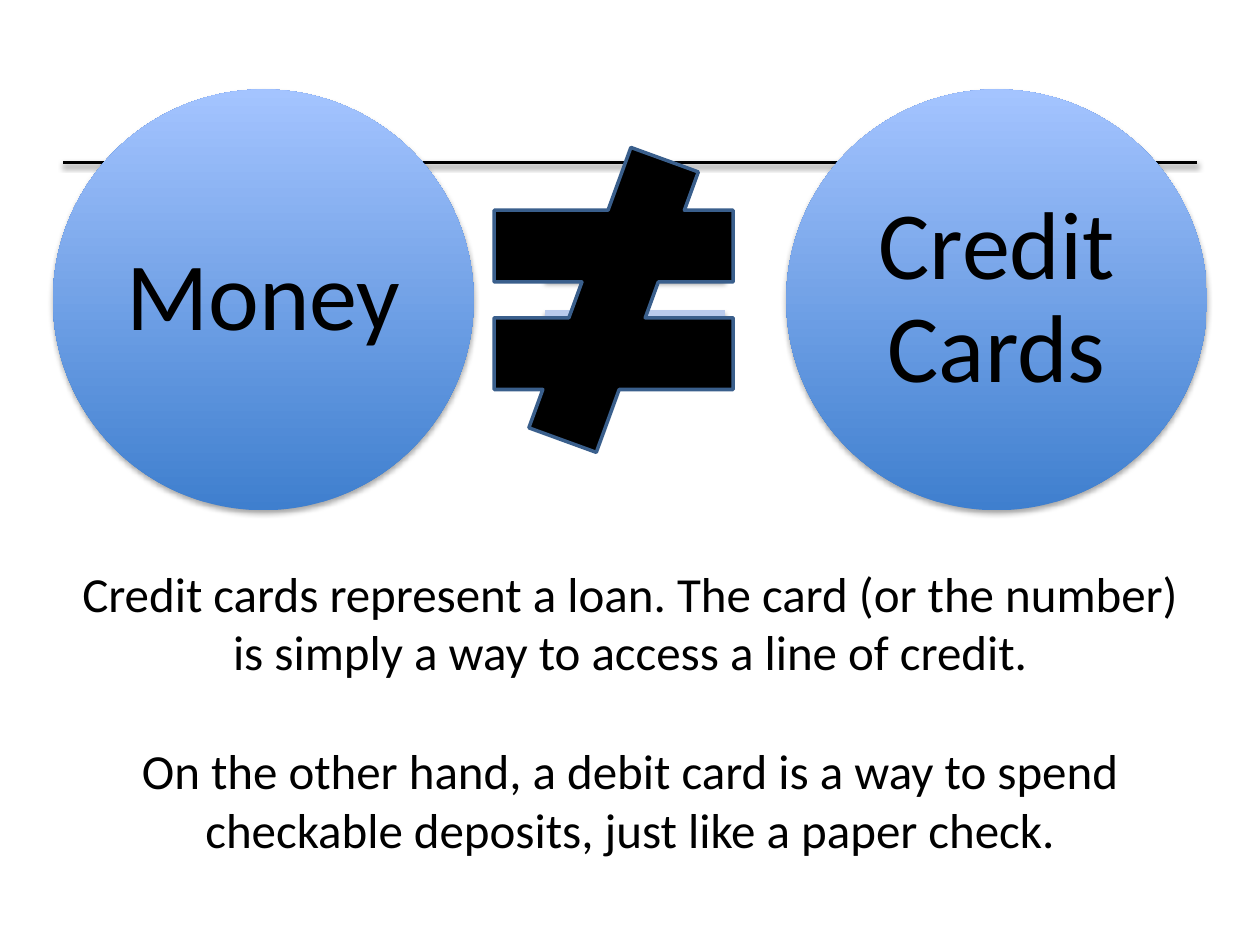
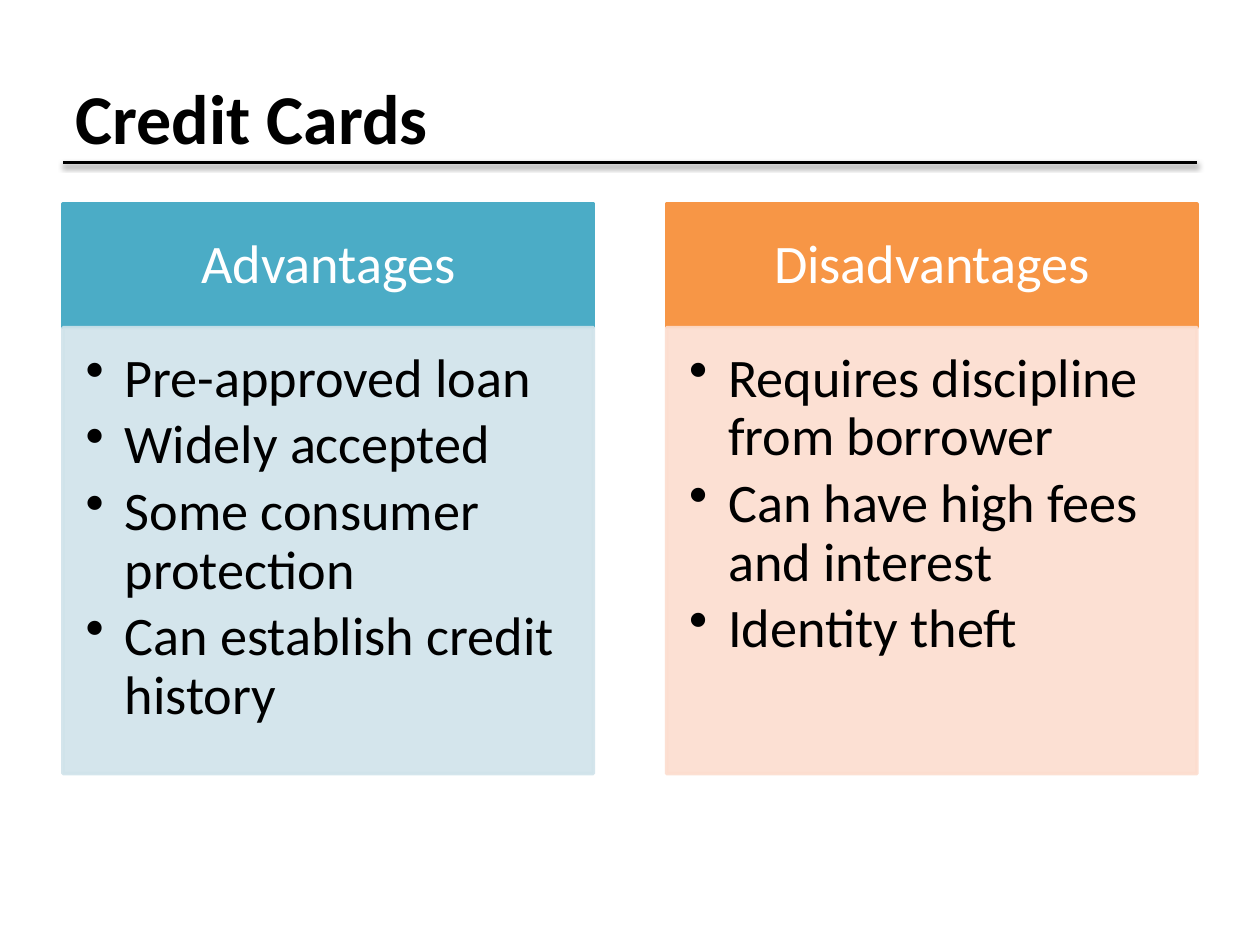
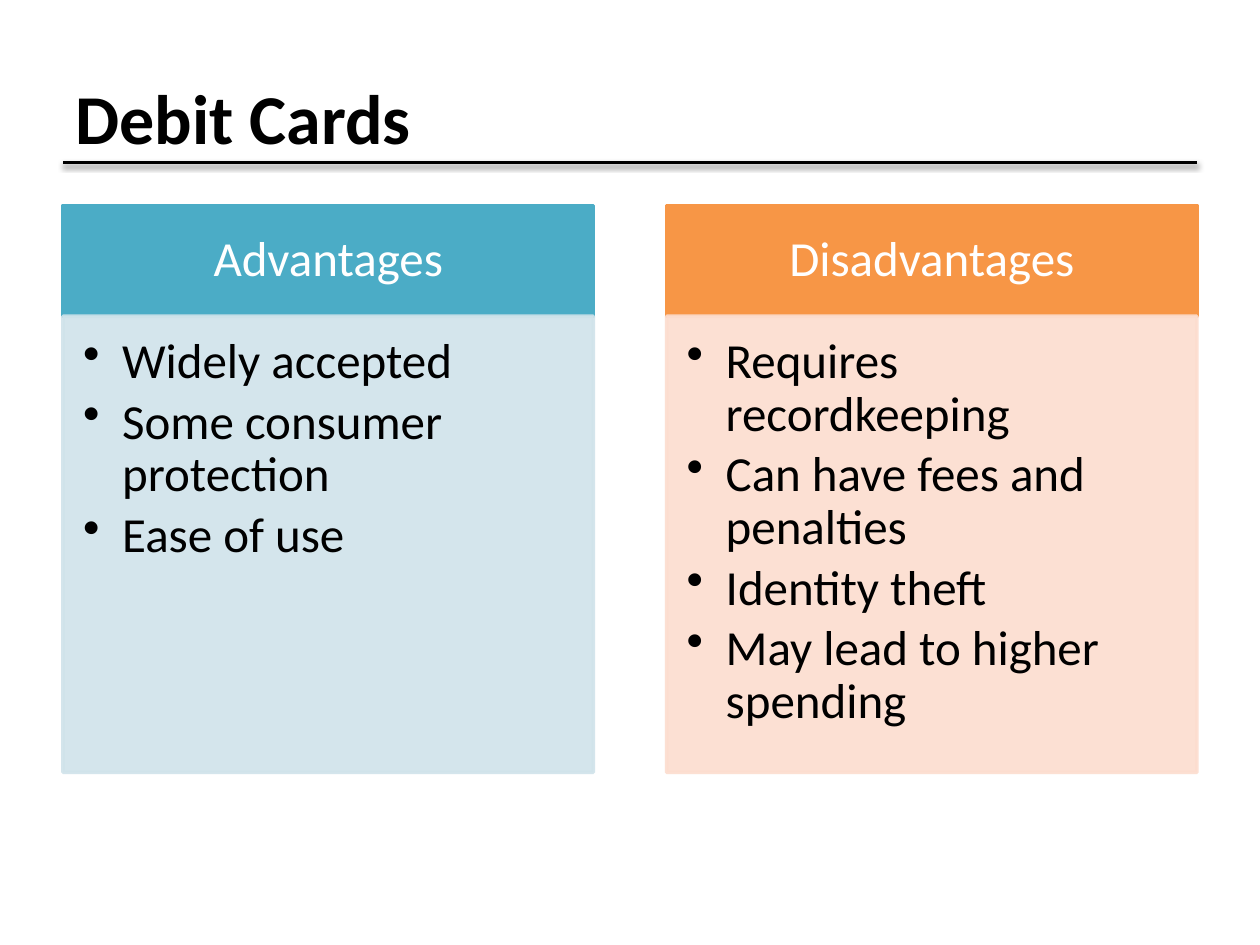
from lxml.etree import SubElement
from pptx import Presentation
from pptx.dml.color import RGBColor
from pptx.enum.shapes import MSO_CONNECTOR, MSO_SHAPE
from pptx.enum.text import MSO_ANCHOR, MSO_AUTO_SIZE, PP_ALIGN
from pptx.oxml.ns import qn
from pptx.util import Inches, Pt

# Shared style
FONT = "Calibri"
BLACK = RGBColor(0x00, 0x00, 0x00)
WHITE = RGBColor(0xFF, 0xFF, 0xFF)
TEAL = RGBColor(0x4B, 0xAC, 0xC6)
PALE_TEAL = RGBColor(0xD0, 0xE3, 0xEA)
ORANGE = RGBColor(0xF7, 0x96, 0x46)
PALE_ORANGE = RGBColor(0xFC, 0xDD, 0xCF)
OUTLINE_BLUE = RGBColor(0x3A, 0x5F, 0x8C)
CIRCLE_BLUES = RGBColor(0x3F, 0x7F, 0xCE), RGBColor(0xA4, 0xC4, 0xFF)
SIGN_BLUES = RGBColor(0xAD, 0xBF, 0xE1), RGBColor(0xCC, 0xDD, 0xFF)

TITLE_ONLY, BLANK = 5, 6
MARGIN, CONTENT_WIDTH, RULE_TOP = 0.5, 9, 1.29
COLUMN_WIDTH = 4.21
COLUMN_COLORS = [(TEAL, PALE_TEAL), (ORANGE, PALE_ORANGE)]


class Deck:
    def __init__(self):
        self.presentation = Presentation()
        self.presentation.slide_width = Inches(10)
        self.presentation.slide_height = Inches(7.5)
        self.slide = None

    def new_slide(self, title=None):
        layout = TITLE_ONLY if title else BLANK
        layouts = self.presentation.slide_layouts
        self.slide = self.presentation.slides.add_slide(layouts[layout])
        self.rule()
        if title:
            self.title(title)

    def rule(self):
        rule = self.slide.shapes.add_connector(
            MSO_CONNECTOR.STRAIGHT, Inches(MARGIN), Inches(RULE_TOP),
            Inches(MARGIN + CONTENT_WIDTH), Inches(RULE_TOP))
        rule.line.color.rgb = BLACK
        rule.line.width = Pt(2)
        self.cast_shadow(rule, distance=1.6, opacity=38)

    def title(self, text):
        title = self.slide.shapes.title
        title.left, title.top = Inches(MARGIN), Inches(0.3)
        title.width, title.height = Inches(CONTENT_WIDTH), Inches(1.25)
        title.text_frame.vertical_anchor = MSO_ANCHOR.MIDDLE
        self.set_lines(title.text_frame, [text], 40, BLACK, PP_ALIGN.LEFT, bold=True)

    def cast_shadow(self, shape, distance=1.8, opacity=35):
        effects = SubElement(shape._element.spPr, qn("a:effectLst"))
        shadow = SubElement(effects, qn("a:outerShdw"), blurRad=str(Pt(3.1)),
                            dist=str(Pt(distance)), dir="5400000", rotWithShape="0")
        color = SubElement(shadow, qn("a:srgbClr"), val=str(BLACK))
        SubElement(color, qn("a:alpha"), val=str(opacity * 1000))

    def set_lines(self, frame, lines, size, color, align, bold=False, spacing=None):
        frame.word_wrap = True
        frame.text = "\n".join(lines)
        for paragraph in frame.paragraphs:
            paragraph.alignment = align
            if spacing:
                paragraph.line_spacing = spacing
            for run in paragraph.runs:
                run.font.name = FONT
                run.font.size = Pt(size)
                run.font.bold = bold
                run.font.color.rgb = color

    def inset(self, frame, left, top, right, bottom):
        frame.margin_left, frame.margin_top = Inches(left), Inches(top)
        frame.margin_right, frame.margin_bottom = Inches(right), Inches(bottom)

    def shape(self, kind, left, top, width, height):
        return self.slide.shapes.add_shape(
            kind, Inches(left), Inches(top), Inches(width), Inches(height))

    def solid(self, kind, left, top, width, height, fill, line):
        solid = self.shape(kind, left, top, width, height)
        solid.shadow.inherit = False
        solid.fill.solid()
        solid.fill.fore_color.rgb = fill
        solid.line.color.rgb = line
        solid.line.width = Pt(2)
        return solid

    def glossy(self, kind, left, top, size, blues):
        glossy = self.shape(kind, left, top, size, size)
        glossy.fill.gradient()
        glossy.fill.gradient_angle = 90
        for stop, blue in zip(glossy.fill.gradient_stops, blues):
            stop.color.rgb = blue
        glossy.line.fill.background()
        self.cast_shadow(glossy)
        return glossy

    def circle(self, left, label):
        frame = self.glossy(MSO_SHAPE.OVAL, left, 0.71, 3.34, CIRCLE_BLUES).text_frame
        self.inset(frame, 0.08, 0.08, 0.08, 0.08)
        frame.vertical_anchor = MSO_ANCHOR.MIDDLE
        self.set_lines(frame, [label], 55, BLACK, PP_ALIGN.CENTER, spacing=0.9)

    def explanation(self, lines, top, height):
        box = self.slide.shapes.add_textbox(
            Inches(MARGIN), Inches(top), Inches(CONTENT_WIDTH), Inches(height))
        frame = box.text_frame
        self.set_lines(frame, lines, 28, BLACK, PP_ALIGN.CENTER)
        frame.auto_size = MSO_AUTO_SIZE.SHAPE_TO_FIT_TEXT
        for paragraph in frame.paragraphs[1:]:
            paragraph.space_before = Pt(34)

    def heading(self, text, left, top, height, size, color, insets):
        heading = self.solid(MSO_SHAPE.RECTANGLE, left, top, COLUMN_WIDTH, height,
                             color, color)
        frame = heading.text_frame
        self.inset(frame, *insets)
        frame.vertical_anchor = MSO_ANCHOR.MIDDLE
        self.set_lines(frame, [text], size, WHITE, PP_ALIGN.CENTER, spacing=0.9)

    def bullets(self, points, left, top, height, size, color, insets):
        panel = self.solid(MSO_SHAPE.RECTANGLE, left, top, COLUMN_WIDTH, height,
                           color, color)
        for tint in panel._element.spPr.iter(qn("a:srgbClr")):
            SubElement(tint, qn("a:alpha"), val="90000")
        frame = panel.text_frame
        self.inset(frame, *insets)
        frame.vertical_anchor = MSO_ANCHOR.TOP
        self.set_lines(frame, points, size, BLACK, PP_ALIGN.LEFT, spacing=0.9)
        for paragraph in frame.paragraphs:
            paragraph.level = 1
            paragraph.space_after = Pt(round(size * 0.15, 1))
            properties = paragraph._p.get_or_add_pPr()
            properties.set("marL", str(Inches(0.31)))
            properties.set("indent", str(-Inches(0.31)))
            SubElement(properties, qn("a:buChar"), char="•")

    def comparison(self, advantages, disadvantages, size, top, heading_height,
                   panel_height, heading_insets, panel_insets):
        columns = [("Advantages", advantages), ("Disadvantages", disadvantages)]
        lefts = [MARGIN, MARGIN + CONTENT_WIDTH - COLUMN_WIDTH]
        for (name, points), left, (strong, pale) in zip(columns, lefts, COLUMN_COLORS):
            self.heading(name, left, top, heading_height, size, strong, heading_insets)
            self.bullets(points, left, top + heading_height, panel_height, size, pale,
                         panel_insets)


def main():
    deck = Deck()

    # Money is not credit cards
    deck.new_slide()
    deck.circle(0.42, "Money")
    deck.glossy(MSO_SHAPE.MATH_EQUAL, 4.07, 1.38, 1.94, SIGN_BLUES)
    deck.circle(6.24, "Credit Cards")
    deck.solid(MSO_SHAPE.MATH_NOT_EQUAL, 3.58, 1.17, 2.58, 2.42, BLACK, OUTLINE_BLUE)
    deck.explanation([
        "Credit cards represent a loan. The card (or the number) is simply a way "
        "to access a line of credit.",
        "On the other hand, a debit card is a way to spend checkable deposits, "
        "just like a paper check.",
    ], top=4.42, height=2.46)

    # Credit cards
    deck.new_slide("Credit Cards")
    deck.comparison(
        ["Pre-approved loan", "Widely accepted", "Some consumer protection",
         "Can establish credit history"],
        ["Requires discipline from borrower", "Can have high fees and interest",
         "Identity theft"],
        size=31, top=1.62, heading_height=0.98, panel_height=3.54,
        heading_insets=(0.24, 0.14, 0.24, 0.14),
        panel_insets=(0.18, 0.18, 0.24, 0.27))

    # Debit cards
    deck.new_slide("Debit Cards")
    deck.comparison(
        ["Widely accepted", "Some consumer protection", "Ease of use"],
        ["Requires recordkeeping", "Can have fees and penalties", "Identity theft",
         "May lead to higher spending"],
        size=28, top=1.63, heading_height=0.88, panel_height=3.62,
        heading_insets=(0.22, 0.12, 0.22, 0.12),
        panel_insets=(0.16, 0.16, 0.22, 0.24))

    deck.presentation.save("out.pptx")


if __name__ == "__main__":
    main()
